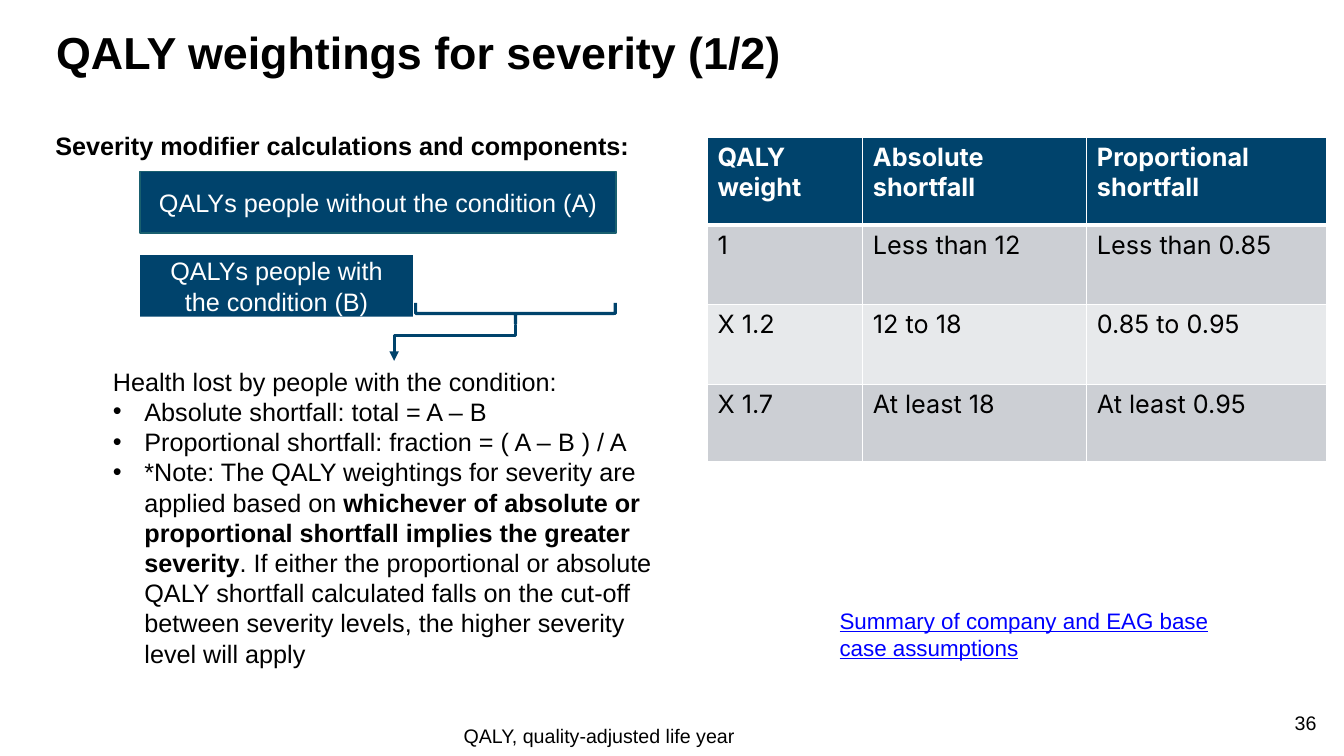
"""Build the slide on QALY weightings for severity."""
from lxml import etree
from pptx import Presentation
from pptx.dml.color import RGBColor
from pptx.enum.shapes import MSO_CONNECTOR, MSO_SHAPE
from pptx.enum.text import MSO_ANCHOR, PP_ALIGN
from pptx.oxml.ns import qn
from pptx.util import Pt

RECT, BRACE = MSO_SHAPE.RECTANGLE, MSO_SHAPE.LEFT_BRACE
ELBOW = MSO_CONNECTOR.ELBOW
LEFT, MID, RIGHT = PP_ALIGN.LEFT, PP_ALIGN.CENTER, PP_ALIGN.RIGHT
TOP, CENTRE = MSO_ANCHOR.TOP, MSO_ANCHOR.MIDDLE

THEME = {
    "black": RGBColor(0, 0, 0),
    "white": RGBColor(255, 255, 255),
    "navy": RGBColor(0x00, 0x43, 0x6C),
    "teal": RGBColor(0x19, 0x5F, 0x6F),
    "link": RGBColor(0, 0, 255),
    "dark": RGBColor(0xCC, 0xCF, 0xD4),
    "light": RGBColor(0xE7, 0xE9, 0xEB),
    "title": 32, "body": 18, "ref": 16, "foot": 14,
    "font": "Arial", "grid": "Inter",
}


def write(par, text, size="body", color="black", bold=False, font="font"):
    """Add one styled run to a paragraph."""
    run = par.add_run()
    run.text = text
    run.font.name = THEME[font]
    run.font.size = Pt(THEME[size])
    run.font.color.rgb = THEME[color]
    run.font.bold = bold
    return run


def frame(box, align=LEFT, anchor=TOP):
    """Prepare the text frame of a box and return its first paragraph."""
    text = box.text_frame
    text.word_wrap = True
    text.vertical_anchor = anchor
    text.paragraphs[0].alignment = align
    return text.paragraphs[0]


deck = Presentation()
deck.slide_width, deck.slide_height = Pt(960), Pt(540)
slide = deck.slides.add_slide(deck.slide_layouts[6])
shapes = slide.shapes

labels = [
    ("36", (911, 504, 36.5, 29), "foot", "black", False, RIGHT),
    ("QALY weightings for severity (1/2)", (33, 18.7, 895, 104), "title", "black", True, LEFT),
    ("Severity modifier calculations and components:", (32.4, 89.3, 516, 29),
     "body", "black", True, LEFT),
    ("QALY, quality-adjusted life year", (324, 513.4, 362, 24.5), "foot", "black", False, LEFT),
    ("Summary of company and EAG base case assumptions", (592.6, 430, 294, 46),
     "ref", "link", False, LEFT),
]
for text, place, size, color, bold, align in labels:
    par = frame(shapes.add_textbox(*map(Pt, place)), align)
    run = write(par, text, size, color, bold)
    if size == "title":
        par.line_spacing = 0.9
    run.font.underline = color == "link"

bars = [
    ("QALYs people without the condition (A)", 122.4, 340, "teal"),
    ("QALYs people with the condition (B)", 182.2, 195, None),
]
for text, top, width, edge in bars:
    bar = shapes.add_shape(RECT, Pt(100), Pt(top), Pt(width), Pt(44))
    bar.shadow.inherit = False
    bar.fill.solid()
    bar.fill.fore_color.rgb = THEME["navy"]
    if edge:
        bar.line.color.rgb = THEME[edge]
        bar.line.width = Pt(1)
    else:
        bar.line.fill.background()
    write(frame(bar, MID, CENTRE), text, color="white")

note = shapes.add_shape(RECT, Pt(73.6), Pt(257.8), Pt(421), Pt(247))
note.shadow.inherit = False
note.fill.solid()
note.fill.fore_color.rgb = THEME["white"]
note.line.fill.background()
write(frame(note), "Health lost by people with the condition:")
points = [
    [("Absolute shortfall: total = A – B", False)],
    [("Proportional shortfall: fraction = ( A – B ) / A", False)],
    [("*Note: The QALY weightings for severity are applied based on ", False),
     ("whichever of absolute or proportional shortfall implies the greater severity", True),
     (". If either the proportional or absolute QALY shortfall calculated falls on the "
      "cut-off between severity levels, the higher severity level will apply", False)],
]
for point in points:
    par = note.text_frame.add_paragraph()
    par.alignment = LEFT
    props = par._p.get_or_add_pPr()
    props.set("marL", str(Pt(22.5)))
    props.set("indent", str(-Pt(22.5)))
    etree.SubElement(props, qn("a:buFont")).set("typeface", THEME["font"])
    etree.SubElement(props, qn("a:buChar")).set("char", "•")
    for text, bold in point:
        write(par, text, bold=bold)

brace = shapes.add_shape(BRACE, Pt(360.7), Pt(152.6), Pt(15), Pt(142.6))
brace.shadow.inherit = False
brace.rotation = 270
brace.adjustments[0], brace.adjustments[1] = 0, 0.5
brace.fill.background()

arrow = shapes.add_connector(ELBOW, Pt(311.8), Pt(201.6), Pt(337.7), Pt(288))
props = arrow._element.spPr
props.find(qn("a:xfrm")).set("rot", "5400000")
guide = etree.SubElement(props.find(qn("a:prstGeom")).find(qn("a:avLst")), qn("a:gd"))
guide.set("name", "adj1")
guide.set("fmla", "val 30500")
for part in (brace, arrow):
    part.line.color.rgb = THEME["navy"]
    part.line.width = Pt(2.25)
etree.SubElement(props.find(qn("a:ln")), qn("a:tailEnd")).set("type", "triangle")
etree.SubElement(props, qn("a:effectLst"))

rows = [
    ("QALY weight", "Absolute shortfall", "Proportional shortfall"),
    ("1", "Less than 12", "Less than 0.85"),
    ("X 1.2", "12 to 18", "0.85 to 0.95"),
    ("X 1.7", "At least 18", "At least 0.95"),
]
widths, heights = (111, 160, 171), (62.5, 57, 57, 55.5)
table = shapes.add_table(len(rows), len(widths), Pt(505.4), Pt(98),
                         Pt(sum(widths)), Pt(sum(heights))).table
for col, width in zip(table.columns, widths):
    col.width = Pt(width)
for i, row in enumerate(rows):
    table.rows[i].height = Pt(heights[i])
    head = i == 0
    for j, text in enumerate(row):
        cell = table.cell(i, j)
        props = cell._tc.get_or_add_tcPr()
        for side in "LRTB":
            thick = (i, side) in ((0, "B"), (1, "T"))
            edge = etree.SubElement(props, qn("a:ln" + side), w=str(Pt(3 if thick else 1)))
            paint = etree.SubElement(edge, qn("a:solidFill"))
            etree.SubElement(paint, qn("a:srgbClr")).set("val", str(THEME["white"]))
        cell.fill.solid()
        cell.fill.fore_color.rgb = THEME["navy" if head else "dark" if i % 2 else "light"]
        write(cell.text_frame.paragraphs[0], text, "body",
              "white" if head else "black", head, "grid")

deck.save("out.pptx")
